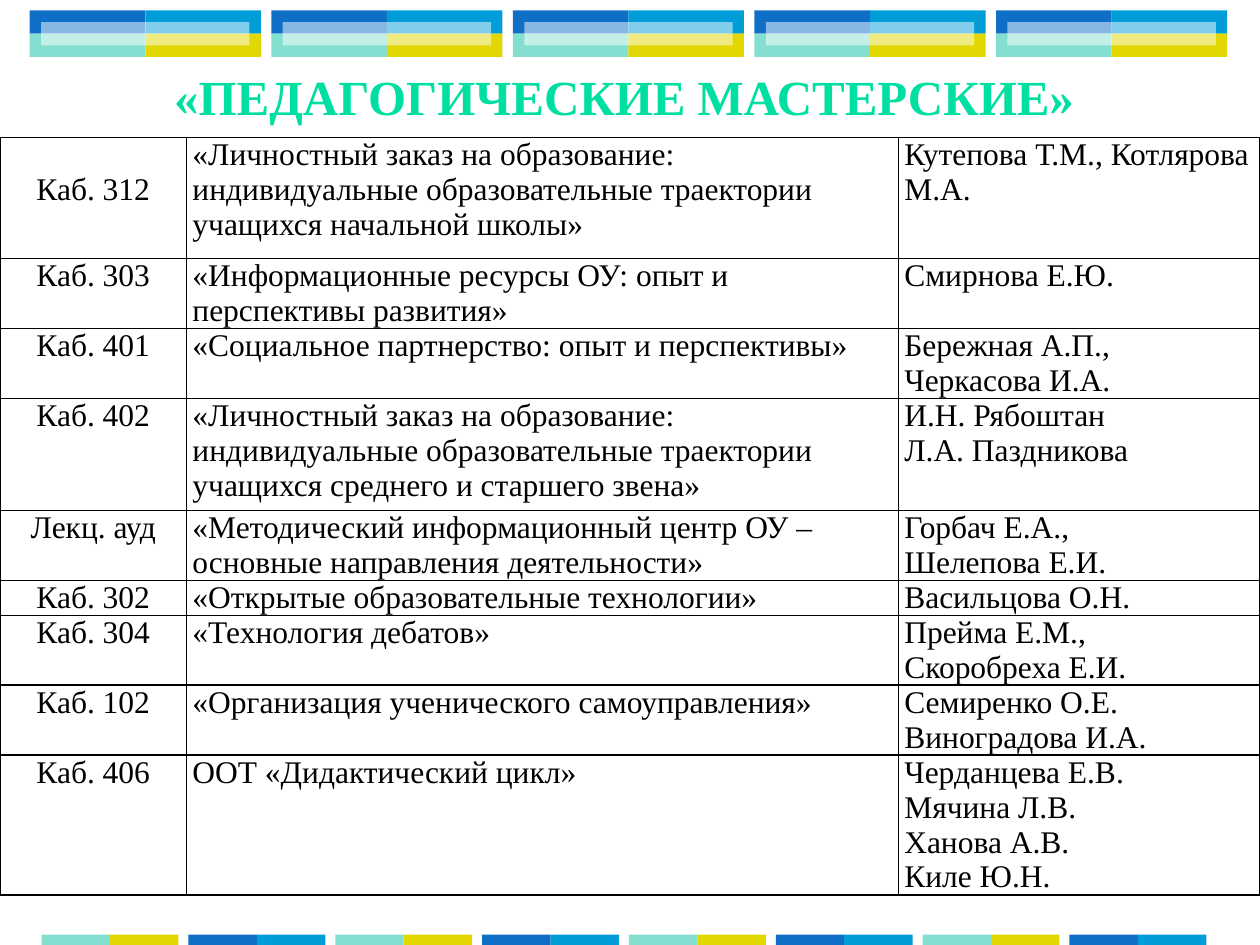
from lxml.etree import SubElement
from pptx import Presentation
from pptx.dml.color import RGBColor
from pptx.enum.shapes import MSO_SHAPE as SHAPE
from pptx.enum.text import MSO_ANCHOR as ANCHOR, PP_ALIGN as ALIGN
from pptx.oxml import parse_xml
from pptx.oxml.ns import nsdecls, qn
from pptx.util import Cm, Pt

BLUE = RGBColor(0x0F, 0x6F, 0xC6)
SKY = RGBColor(0x00, 0x9D, 0xD9)
MINT = RGBColor(0x85, 0xDF, 0xD0)
YELLOW = RGBColor(0xE2, 0xD7, 0x00)
GREEN = RGBColor(0x00, 0xDF, 0xA2)
WHITE = RGBColor(0xFF, 0xFF, 0xFF)
BLACK = RGBColor(0x00, 0x00, 0x00)
FONT = "Times New Roman"

COLS = (3.76, 14.35, 7.29)
ROWS = (
    (2.44, "Каб. 312",
     "«Личностный заказ на образование: индивидуальные образовательные "
     "траектории учащихся начальной школы»",
     ["Кутепова Т.М., Котлярова М.А."]),
    (1.41, "Каб. 303", "«Информационные ресурсы ОУ: опыт и перспективы развития»",
     ["Смирнова Е.Ю."]),
    (1.41, "Каб. 401", "«Социальное партнерство: опыт и перспективы»",
     ["Бережная А.П., Черкасова И.А."]),
    (2.26, "Каб. 402",
     "«Личностный заказ на образование: индивидуальные образовательные "
     "траектории учащихся среднего и старшего звена»",
     ["И.Н. Рябоштан", "Л.А. Паздникова"]),
    (1.41, "Лекц. ауд",
     "«Методический информационный центр ОУ – основные направления деятельности»",
     ["Горбач Е.А.,", "Шелепова Е.И."]),
    (0.7, "Каб. 302", "«Открытые образовательные технологии»", ["Васильцова О.Н."]),
    (1.41, "Каб. 304", "«Технология дебатов»", ["Прейма Е.М.,", "Скоробреха Е.И."]),
    (1.41, "Каб. 102", "«Организация ученического самоуправления»",
     ["Семиренко О.Е.", "Виноградова И.А."]),
    (2.82, "Каб. 406", "ООТ «Дидактический цикл»",
     ["Черданцева Е.В.", "Мячина Л.В.", "Ханова А.В.", "Киле Ю.Н."]),
)


def add_rect(s, x, y, w, h, color, alpha=None):
    sp = s.shapes.add_shape(SHAPE.RECTANGLE, Cm(x), Cm(y), Cm(w), Cm(h))
    sp.shadow.inherit = False
    sp.line.fill.background()
    sp.fill.solid()
    sp.fill.fore_color.rgb = color
    if alpha is not None:
        clr = sp.fill._xPr.find(".//" + qn("a:srgbClr"))
        SubElement(clr, qn("a:alpha")).set("val", str(alpha * 1000))


def write(tf, lines, size=18, color=BLACK, bold=False, align=ALIGN.LEFT):
    tf.word_wrap = True
    for i, line in enumerate(lines):
        p = tf.add_paragraph() if i else tf.paragraphs[0]
        p.alignment = align
        r = p.add_run()
        r.text = line
        r.font.name = FONT
        r.font.size = Pt(size)
        r.font.bold = bold
        r.font.color.rgb = color


def add_top_band(s):
    w, h, y = 2.33, 0.47, 0.21
    for i in range(5):
        x = 0.6 + 4.87 * i
        add_rect(s, x, y, w, h, BLUE)
        add_rect(s, x + w, y, w, h, SKY)
        add_rect(s, x, y + h, w, h, MINT)
        add_rect(s, x + w, y + h, w, h, YELLOW)
        add_rect(s, x + 0.23, y + h / 2, 2 * w - 0.46, h, WHITE, alpha=50)


def add_bottom_band(s):
    w = 1.38
    for i in range(8):
        x = 0.84 + 2.96 * i
        left, right = (BLUE, SKY) if i % 2 else (MINT, YELLOW)
        add_rect(s, x, 18.84, w, 0.21, left)
        add_rect(s, x + w, 18.84, w, 0.21, right)


def add_title(s, text):
    sp = s.shapes.title
    sp.left, sp.top, sp.width, sp.height = Cm(1.78), Cm(1.19), Cm(21.6), Cm(1.47)
    sp.text_frame.vertical_anchor = ANCHOR.MIDDLE
    write(sp.text_frame, [text], size=28, color=GREEN, bold=True, align=ALIGN.CENTER)


def format_cell(cell):
    cell.margin_left = cell.margin_right = Cm(0.12)
    cell.margin_top = cell.margin_bottom = 0
    tc_pr = cell._tc.get_or_add_tcPr()
    for side in "LRTB":
        tc_pr.append(parse_xml(
            f'<a:ln{side} {nsdecls("a")} w="12700"><a:solidFill>'
            f'<a:srgbClr val="{BLACK}"/></a:solidFill></a:ln{side}>'))
    cell.fill.background()


def add_schedule(s):
    height = sum(row[0] for row in ROWS)
    tbl = s.shapes.add_table(len(ROWS), len(COLS), 0, Cm(2.77),
                             Cm(sum(COLS)), Cm(height)).table
    tbl.first_row = tbl.horz_banding = False
    for col, w in zip(tbl.columns, COLS):
        col.width = Cm(w)
    for row, (h, room, topic, people) in zip(tbl.rows, ROWS):
        row.height = Cm(h)
        for i, lines in enumerate(([room], [topic], people)):
            cell = row.cells[i]
            format_cell(cell)
            write(cell.text_frame, lines, align=ALIGN.LEFT if i else ALIGN.CENTER)
    tbl.cell(0, 0).margin_top = Cm(0.7)


def main():
    prs = Presentation()
    prs.slide_width, prs.slide_height = Cm(25.4), Cm(19.05)
    s = prs.slides.add_slide(prs.slide_layouts[5])
    add_top_band(s)
    add_bottom_band(s)
    add_title(s, "«ПЕДАГОГИЧЕСКИЕ МАСТЕРСКИЕ»")
    add_schedule(s)
    prs.save("out.pptx")


if __name__ == "__main__":
    main()
